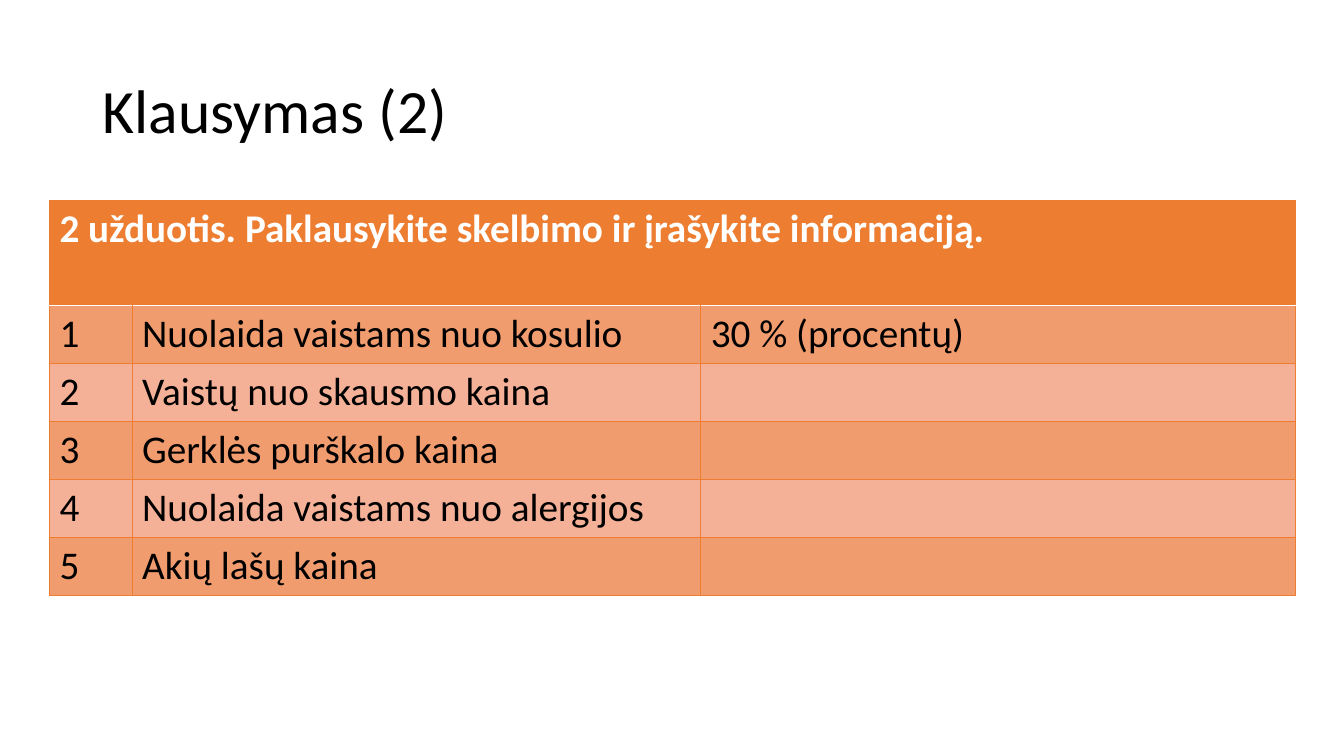
from dataclasses import dataclass

from lxml.etree import SubElement
from pptx import Presentation
from pptx.dml.color import RGBColor
from pptx.enum.text import MSO_ANCHOR, MSO_AUTO_SIZE, PP_ALIGN
from pptx.oxml.ns import qn
from pptx.util import Inches, Pt


@dataclass(frozen=True)
class Theme:
    font: str = "Calibri"
    title_size: int = 44
    table_size: int = 28
    text: str = "000000"
    inverse: str = "FFFFFF"
    accent: str = "ED7D31"
    bands: tuple = ("F19C6E", "F5B197")
    rule: float = 0.5
    header_rule: float = 1


TITLE = "Klausymas (2)"
TASK = "2 užduotis. Paklausykite skelbimo ir įrašykite informaciją."
ITEMS = [
    ("Nuolaida vaistams nuo kosulio", "30 % (procentų)"),
    ("Vaistų nuo skausmo kaina", ""),
    ("Gerklės purškalo kaina", ""),
    ("Nuolaida vaistams nuo alergijos", ""),
    ("Akių lašų kaina", ""),
]
COLUMNS = (0.82, 5.64, 5.9)
HEADER_HEIGHT, ROW_HEIGHT = 1.04, 0.57


class SlideBuilder:
    def __init__(self, prs, theme):
        self.theme = theme
        self.slide = prs.slides.add_slide(prs.slide_layouts[5])

    def add_text(self, tf, text, size, color, bold=False):
        p = tf.paragraphs[0]
        p.alignment = PP_ALIGN.LEFT
        r = p.add_run()
        r.text = text
        formats = {"name": self.theme.font, "size": Pt(size), "bold": bold}
        for name, value in formats.items():
            setattr(r.font, name, value)
        r.font.color.rgb = RGBColor.from_string(color)
        return p

    def title(self, text, left, top, width, height):
        sp = self.slide.shapes.title
        box = {"left": left, "top": top, "width": width, "height": height}
        for name, value in box.items():
            setattr(sp, name, Inches(value))
        tf = sp.text_frame
        formats = {
            "word_wrap": True,
            "auto_size": MSO_AUTO_SIZE.NONE,
            "vertical_anchor": MSO_ANCHOR.MIDDLE,
        }
        for name, value in formats.items():
            setattr(tf, name, value)
        p = self.add_text(tf, text, self.theme.title_size, self.theme.text)
        p.line_spacing = 0.9

    def borders(self, cell, **special):
        tcPr = cell._tc.get_or_add_tcPr()
        for i, side in enumerate("LRTB"):
            color, width = special.get(side, (self.theme.accent, self.theme.rule))
            ln = SubElement(tcPr, qn(f"a:ln{side}"), w=str(Pt(width)))
            fill = SubElement(ln, qn("a:solidFill"))
            SubElement(fill, qn("a:srgbClr"), val=color)
            tcPr.insert(i, ln)

    def cell(self, cell, text, fill, color, bold=False, **special):
        cell.fill.solid()
        cell.fill.fore_color.rgb = RGBColor.from_string(fill)
        self.borders(cell, **special)
        if text:
            self.add_text(cell.text_frame, text, self.theme.table_size, color, bold)

    def table(self, heading, items, left, top):
        theme = self.theme
        heights = [HEADER_HEIGHT] + [ROW_HEIGHT] * len(items)
        frame = self.slide.shapes.add_table(
            len(heights), len(COLUMNS), Inches(left), Inches(top),
            Inches(sum(COLUMNS)), Inches(sum(heights)))
        table = frame.table
        for name in ("first_row", "horz_banding"):
            setattr(table, name, False)
        for column, width in zip(table.columns, COLUMNS):
            column.width = Inches(width)
        for row, height in zip(table.rows, heights):
            row.height = Inches(height)

        divider = (theme.inverse, theme.header_rule)
        table.cell(0, 0).merge(table.cell(0, len(COLUMNS) - 1))
        for col in range(len(COLUMNS)):
            self.cell(table.cell(0, col), "" if col else heading,
                      theme.accent, theme.inverse, True, B=divider)
        for number, item in enumerate(items, 1):
            special = {"T": divider} if number == 1 else {}
            fill = theme.bands[(number - 1) % len(theme.bands)]
            for col, text in enumerate((str(number), *item)):
                self.cell(table.cell(number, col), text, fill, theme.text, **special)


def main():
    prs = Presentation()
    prs.slide_width, prs.slide_height = Inches(13.33), Inches(7.5)
    s = SlideBuilder(prs, Theme())
    s.title(TITLE, 0.92, 0.4, 11.5, 1.45)
    s.table(TASK, ITEMS, 0.49, 1.99)
    prs.save("out.pptx")


if __name__ == "__main__":
    main()
